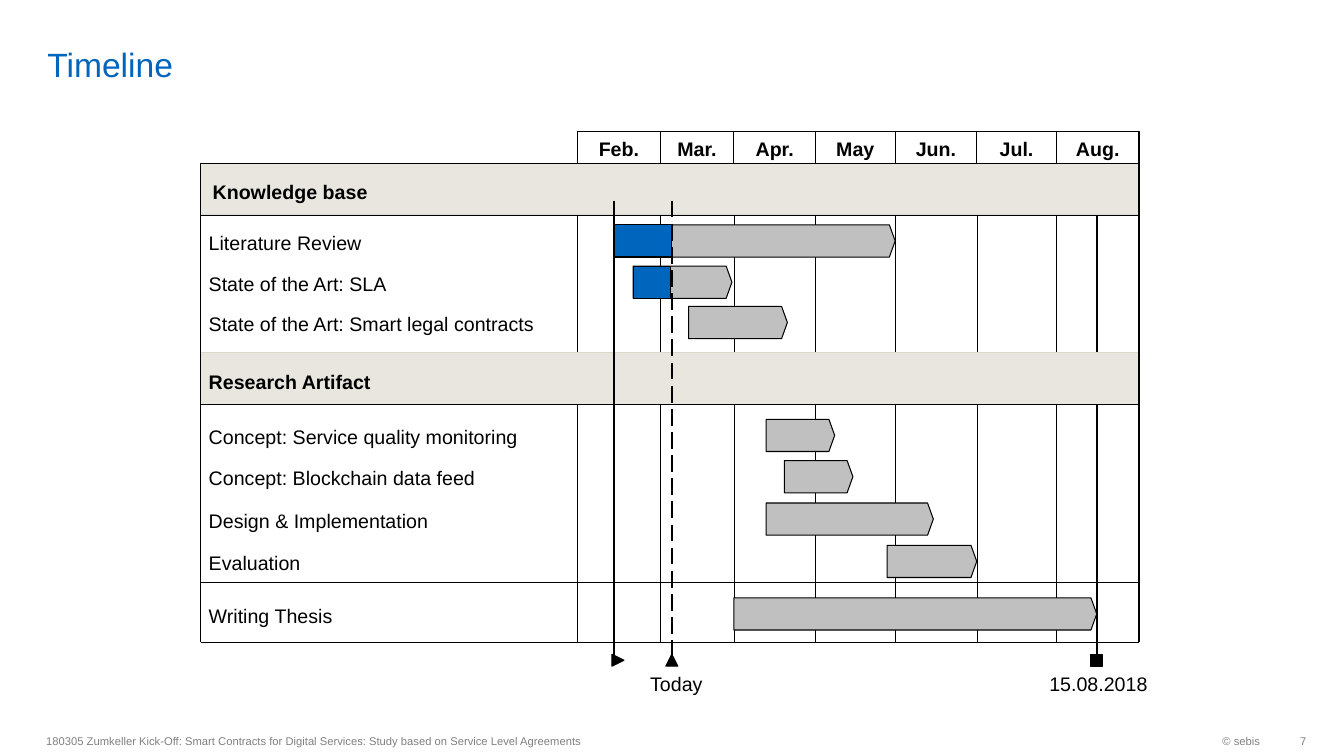
from lxml import etree
from pptx import Presentation
from pptx.dml.color import RGBColor
from pptx.enum.dml import MSO_LINE
from pptx.enum.shapes import MSO_CONNECTOR, MSO_SHAPE
from pptx.enum.text import MSO_ANCHOR, PP_ALIGN
from pptx.oxml.ns import qn
from pptx.util import Pt

RECTANGLE, TRIANGLE, PENTAGON = MSO_SHAPE.RECTANGLE, MSO_SHAPE.ISOSCELES_TRIANGLE, MSO_SHAPE.PENTAGON
STRAIGHT, LONG_DASH = MSO_CONNECTOR.STRAIGHT, MSO_LINE.LONG_DASH
TOP, MIDDLE, BOTTOM = MSO_ANCHOR.TOP, MSO_ANCHOR.MIDDLE, MSO_ANCHOR.BOTTOM
LEFT, CENTER, RIGHT = PP_ALIGN.LEFT, PP_ALIGN.CENTER, PP_ALIGN.RIGHT

COLORS = {"blue": "0065BD", "gray": "808080", "bar": "C0C0C0", "band": "E8E6DF",
          "band edge": "DAD7CB", "black": "000000", "white": "FFFFFF"}

MONTHS = ["Feb.", "Mar.", "Apr.", "May", "Jun.", "Jul.", "Aug."]
MONTH_EDGES = [269.3, 328.3, 380.9, 439.2, 496.1, 554.4, 611.3, 670.3]
HEADER_HEIGHT, BAND_HEIGHT, BAR_HEIGHT = 23, 36.7, 23
LABEL_INDENT, LABEL_HEIGHT, MARKER_SIZE = 5.8, 19.4, 8.6
LINES_TOP, MILESTONE_BOTTOM = 49.7, 378

BANDS = [("Knowledge base", 23, 8.6), ("Research Artifact", 158.4, LABEL_INDENT)]
TASKS = [
    ("Literature Review", 67, 295.9, 200.2, 40.3),
    ("State of the Art: SLA", 96.5, 308.9, 70.6, 26.6),
    ("State of the Art: Smart legal contracts", 125.3, 348.5, 70.6, 0),
    ("Concept: Service quality monitoring", 205.9, 403.9, 49, 0),
    ("Concept: Blockchain data feed", 235.4, 416.9, 49, 0),
    ("Design & Implementation", 265.7, 403.9, 119.5, 0),
    ("Evaluation", 295.9, 490.3, 64.1, 0),
    ("Writing Thesis", 333.4, 380.9, 259.2, 0),
]


def color(name):
    """Return the named colour."""
    return RGBColor.from_string(COLORS[name])


def write(shape, text, size=14, ink="black", bold=False, align=LEFT, anchor=TOP,
          insets=(0, 0, 0, 0), spacing=1.14):
    """Put one formatted paragraph into a shape."""
    frame = shape.text_frame
    frame.word_wrap = True
    frame.vertical_anchor = anchor
    (frame.margin_left, frame.margin_top,
     frame.margin_right, frame.margin_bottom) = [Pt(inset) for inset in insets]
    para = frame.paragraphs[0]
    para.alignment = align
    para.line_spacing = spacing
    span = para.add_run()
    span.text = text
    span.font.name = "Arial"
    span.font.size = Pt(size)
    span.font.bold = bold
    span.font.color.rgb = color(ink)


def add_text(page, box, text, **formats):
    """Add a text box."""
    write(page.shapes.add_textbox(*[Pt(length) for length in box]), text, **formats)


def add_block(page, kind, box, fill=None, edge="black"):
    """Add a preset shape with a thin outline."""
    shape = page.shapes.add_shape(kind, *[Pt(length) for length in box])
    shape.shadow.inherit = False
    if fill:
        shape.fill.solid()
        shape.fill.fore_color.rgb = color(fill)
    else:
        shape.fill.background()
    if edge:
        shape.line.color.rgb = color(edge)
        shape.line.width = Pt(0.75)
    else:
        shape.line.fill.background()
    return shape


def add_line(page, start, end, width=0.75, dash=None):
    """Add a straight black line."""
    line = page.shapes.add_connector(STRAIGHT, *[Pt(length) for length in (*start, *end)])
    line.line.color.rgb = color("black")
    line.line.width = Pt(width)
    if dash:
        line.line.dash_style = dash
    etree.SubElement(line._element.spPr, qn("a:effectLst"))


def add_title(page, box, text):
    """Move and format the title placeholder."""
    title = page.shapes.title
    title.left, title.top, title.width, title.height = [Pt(length) for length in box]
    write(title, text, size=24, ink="blue", anchor=BOTTOM, insets=(7.2, 0, 7.2, 0), spacing=1)


def add_footer(page, box):
    """Add the file title, the owner and the page number."""
    left, top, width, height = box
    number_width, owner_width = 25.9, 168.5
    number_left = left + width - number_width
    parts = [
        ("180305 Zumkeller Kick-Off: Smart Contracts for Digital Services: "
         "Study based on Service Level Agreements", left, 453.6, LEFT, 7.2),
        ("© sebis", number_left - owner_width, owner_width, RIGHT, 7.2),
        ("7", number_left, number_width, RIGHT, 0),
    ]
    for text, part_left, part_width, align, right_inset in parts:
        add_text(page, (part_left, top, part_width, height), text, size=8, ink="gray",
                 align=align, anchor=MIDDLE, insets=(7.2, 3.6, right_inset, 3.6), spacing=1)


def add_grid(page, box):
    """Add the month headers and the lines between months."""
    left, top, width, height = box
    for month, start, end in zip(MONTHS, MONTH_EDGES, MONTH_EDGES[1:]):
        header = add_block(page, RECTANGLE, (left + start, top, end - start, HEADER_HEIGHT))
        write(header, month, bold=True, align=CENTER, anchor=MIDDLE, insets=(0, 2.2, 0, 2.2))
    for edge in MONTH_EDGES[:-1]:
        add_line(page, (left + edge, top + LINES_TOP), (left + edge, top + height),
                 0.75 if edge == MONTH_EDGES[0] else 0.25)


def add_bands(page, box):
    """Add the shaded section headings."""
    left, top, width, height = box
    for heading, offset, indent in BANDS:
        add_block(page, RECTANGLE, (left, top + offset, width, BAND_HEIGHT), "band", "band edge")
        add_text(page, (left + indent, top + offset + 9.7, 200, LABEL_HEIGHT), heading, bold=True)


def add_tasks(page, box):
    """Add each task's label, bar and finished part."""
    left, top, width, height = box
    for label, offset, start, length, done in TASKS:
        add_text(page, (left + LABEL_INDENT, top + offset + 1.8, 258.5, LABEL_HEIGHT), label)
        bar = add_block(page, PENTAGON, (left + start, top + offset, length, BAR_HEIGHT), "bar")
        bar.adjustments[0] = 0.18
        if done:
            add_block(page, RECTANGLE, (left + start, top + offset, done, BAR_HEIGHT), "blue")


def add_frame(page, box):
    """Add the outer border and the lines between sections."""
    left, top, width, height = box
    for offset, weight in [(HEADER_HEIGHT, 0.75), (59.8, 0.25), (195.1, 0.25),
                           (322.6, 0.25), (height, 0.75)]:
        add_line(page, (left, top + offset), (left + width, top + offset), weight)
    for side in (left, left + width):
        add_line(page, (side, top + HEADER_HEIGHT), (side, top + height))


def add_milestone_line(page, box, offset, dash=None):
    """Add the vertical line of one milestone."""
    left, top, width, height = box
    add_line(page, (left + offset, top + LINES_TOP),
             (left + offset, top + MILESTONE_BOTTOM), 1.5, dash)


def add_markers(page, box):
    """Add the milestone markers and their dates."""
    left, top, width, height = box
    for kind, offset, turn in [(TRIANGLE, 293.8, 90), (TRIANGLE, 332.3, 0), (RECTANGLE, 635.3, 0)]:
        marker = add_block(page, kind, (left + offset, top + 373.7, MARKER_SIZE, MARKER_SIZE), "black")
        marker.rotation = turn
    for text, offset in [("Today", 321.1), ("15.08.2018", 606.2)]:
        label = add_block(page, RECTANGLE, (left + offset, top + 383.8, 72, LABEL_HEIGHT),
                          "white", None)
        write(label, text)


def add_timeline(page, box):
    """Add the whole timeline from back to front."""
    add_grid(page, box)
    add_milestone_line(page, box, 640.1)
    add_bands(page, box)
    add_tasks(page, box)
    add_frame(page, box)
    add_milestone_line(page, box, 295.2)
    add_milestone_line(page, box, 337, LONG_DASH)
    add_markers(page, box)


def main():
    """Build and save the deck."""
    deck = Presentation()
    deck.slide_width, deck.slide_height = Pt(960), Pt(540)
    page = deck.slides.add_slide(deck.slide_layouts[5])
    add_title(page, (26.6, 3.6, 833.8, 56.9), "Timeline")
    add_timeline(page, (143.3, 93.6, 670.3, 365))
    add_footer(page, (25.9, 517.5, 907.2, 23))
    deck.save("out.pptx")


if __name__ == "__main__":
    main()
